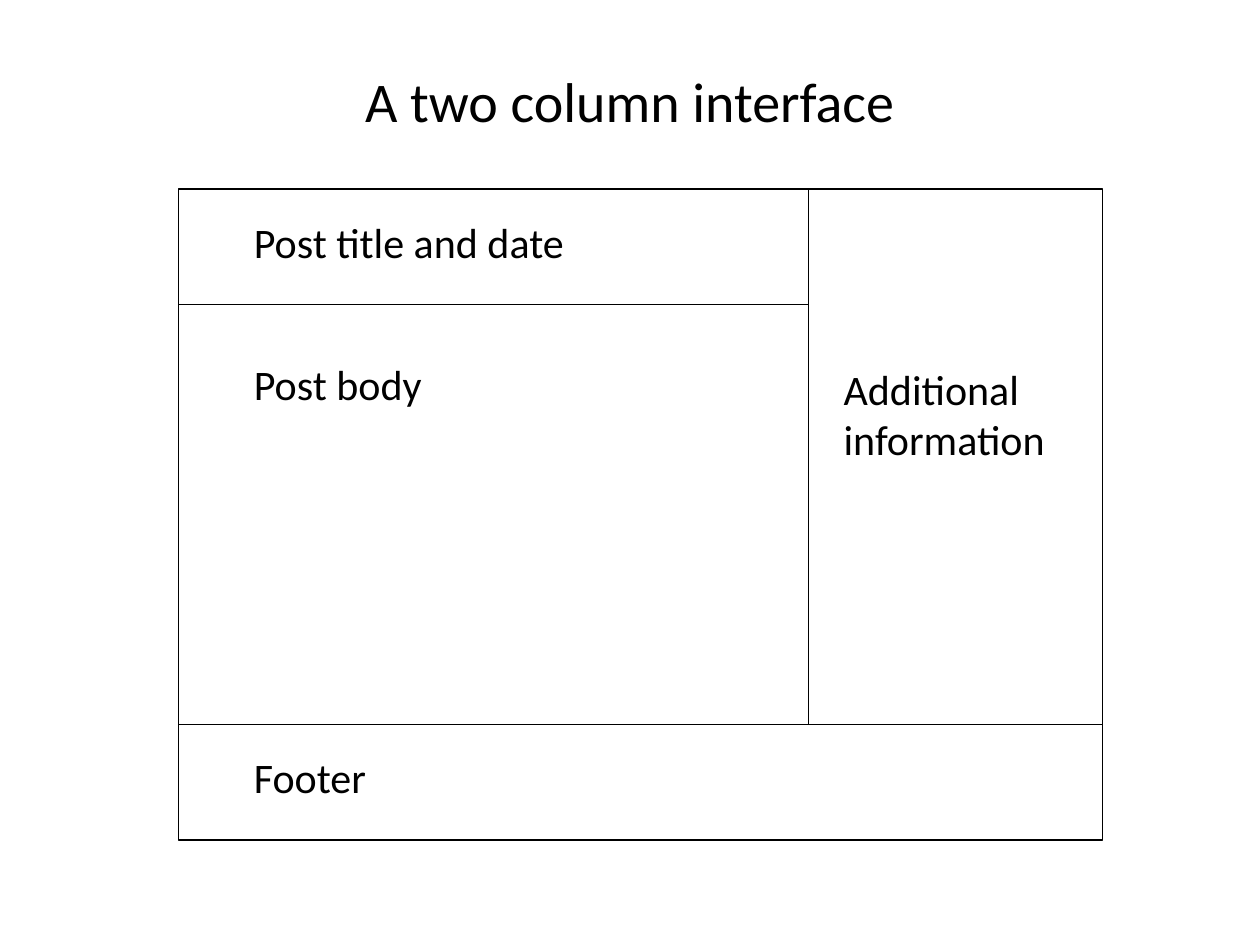
from pptx import Presentation
from pptx.dml.color import RGBColor
from pptx.enum.shapes import MSO_CONNECTOR, MSO_SHAPE
from pptx.enum.text import MSO_ANCHOR, MSO_AUTO_SIZE, PP_ALIGN
from pptx.oxml.ns import qn
from pptx.util import Pt
from lxml.etree import SubElement

BLACK = RGBColor(0, 0, 0)
WHITE = RGBColor(255, 255, 255)
FONT = "Calibri"
THIN = 0.75

# Page frame, in points
LEFT, TOP, WIDE, HIGH = 102, 108, 528, 372
RIGHT, BASE = LEFT + WIDE, TOP + HIGH
BAND = 66
HEAD, FOOT = TOP + BAND, BASE - BAND
SPLIT = LEFT + 360
INDENT = LEFT + 36


def add_frame(slide):
    """Draw the outline of the page."""
    frame = slide.shapes.add_shape(
        MSO_SHAPE.RECTANGLE, Pt(LEFT), Pt(TOP), Pt(WIDE), Pt(HIGH))
    frame.shadow.inherit = False
    frame.fill.background()
    frame.line.color.rgb = BLACK
    frame.line.width = Pt(THIN)


def add_rule(slide, x1, y1, x2, y2):
    """Draw a thin line between two areas."""
    rule = slide.shapes.add_connector(
        MSO_CONNECTOR.STRAIGHT, Pt(x1), Pt(y1), Pt(x2), Pt(y2))
    rule.line.color.rgb = BLACK
    rule.line.width = Pt(THIN)
    SubElement(rule.element.spPr, qn("a:effectLst"))


def add_text(slide, lines, x, y, w, h, size=24):
    """Add a text box with one paragraph per line and return its frame."""
    box = slide.shapes.add_textbox(Pt(x), Pt(y), Pt(w), Pt(h))
    frame = box.text_frame
    frame.word_wrap = False
    frame.auto_size = MSO_AUTO_SIZE.SHAPE_TO_FIT_TEXT
    for i, line in enumerate(lines):
        para = frame.add_paragraph() if i else frame.paragraphs[0]
        run = para.add_run()
        run.text = line
        run.font.name = FONT
        run.font.size = Pt(size)
        run.font.color.rgb = BLACK
    return frame


def add_title(slide, text):
    """Add the centred slide title."""
    frame = add_text(slide, [text], 36, 12, 648, 90, size=32)
    frame.word_wrap = True
    frame.auto_size = MSO_AUTO_SIZE.NONE
    frame.vertical_anchor = MSO_ANCHOR.MIDDLE
    frame.paragraphs[0].alignment = PP_ALIGN.CENTER


def main():
    """Build the slide and save it."""
    deck = Presentation()
    deck.slide_width, deck.slide_height = Pt(720), Pt(540)
    slide = deck.slides.add_slide(deck.slide_layouts[6])
    slide.background.fill.solid()
    slide.background.fill.fore_color.rgb = WHITE

    add_title(slide, "A two column interface")
    add_frame(slide)
    add_rule(slide, LEFT, HEAD, SPLIT, HEAD)
    add_rule(slide, LEFT, FOOT, RIGHT, FOOT)
    add_rule(slide, SPLIT, TOP, SPLIT, FOOT)

    add_text(slide, ["Post title and date"], INDENT, TOP + 12, 193.5, 36)
    add_text(slide, ["Footer"], INDENT, FOOT + 12, 79, 36)
    add_text(slide, ["Post body"], INDENT, 201.5, 111, 36)
    add_text(slide, ["Additional", "information"], 475, 204, 130.5, 65.5)

    deck.save("out.pptx")


main()
